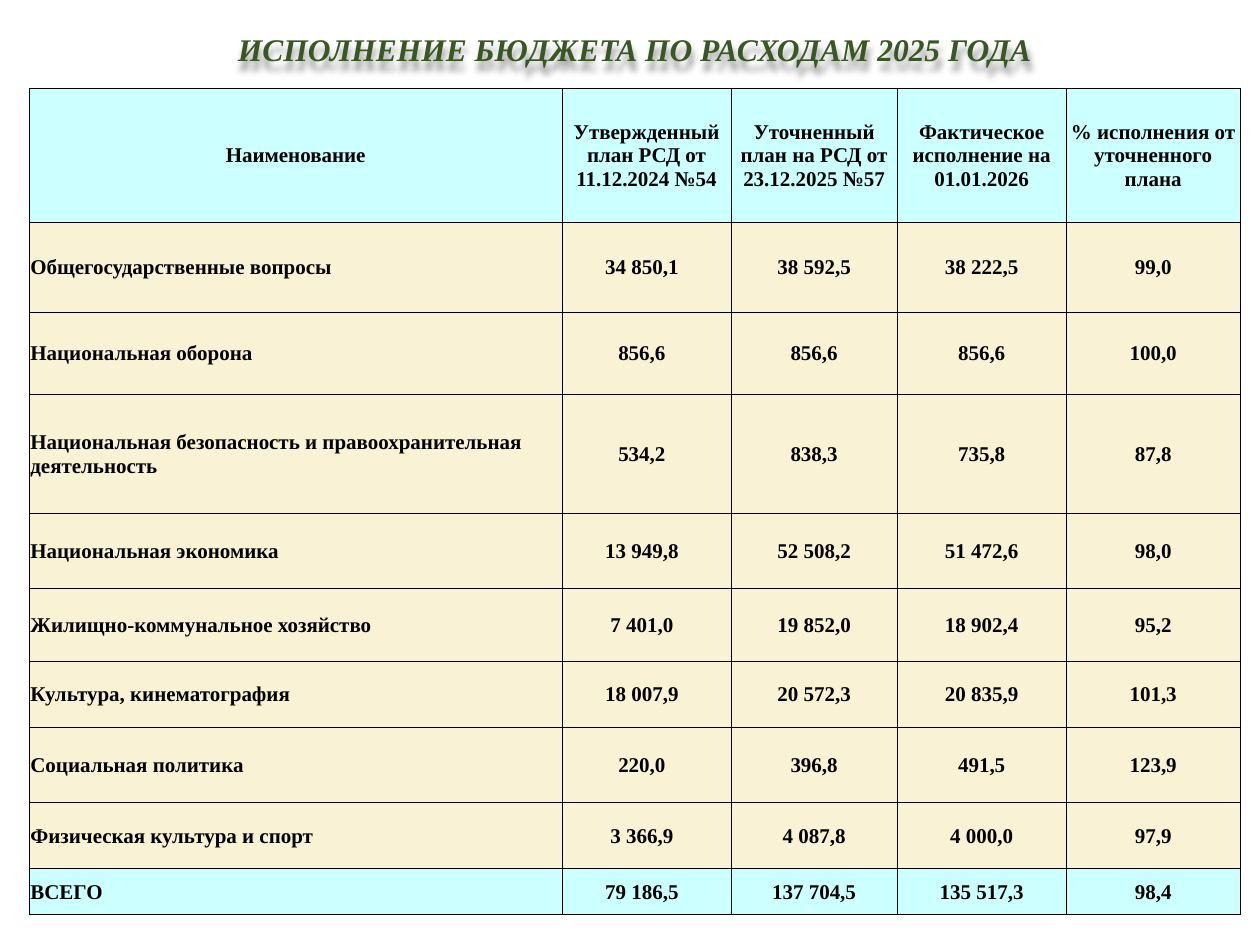
from lxml import etree
from pptx import Presentation
from pptx.dml.color import RGBColor
from pptx.enum import text
from pptx.oxml import parse_xml
from pptx.util import Pt

BLACK = RGBColor(0x00, 0x00, 0x00)
GREEN = RGBColor(0x38, 0x57, 0x23)
CYAN = RGBColor(0xCC, 0xFF, 0xFF)
CREAM = RGBColor(0xFA, 0xF2, 0xD4)
FONT = "Times New Roman"
DRAWING_NS = "http://schemas.openxmlformats.org/drawingml/2006/main"

ROWS = [
    ("Наименование", "Утвержденный план РСД от 11.12.2024 №54",
     "Уточненный план на РСД от 23.12.2025 №57",
     "Фактическое исполнение на 01.01.2026", "% исполнения от уточненного плана"),
    ("Общегосударственные вопросы", "34 850,1", "38 592,5", "38 222,5", "99,0"),
    ("Национальная оборона", "856,6", "856,6", "856,6", "100,0"),
    ("Национальная безопасность и правоохранительная деятельность",
     "534,2", "838,3", "735,8", "87,8"),
    ("Национальная экономика", "13 949,8", "52 508,2", "51 472,6", "98,0"),
    ("Жилищно-коммунальное хозяйство", "7 401,0", "19 852,0", "18 902,4", "95,2"),
    ("Культура, кинематография", "18 007,9", "20 572,3", "20 835,9", "101,3"),
    ("Социальная политика", "220,0", "396,8", "491,5", "123,9"),
    ("Физическая культура и спорт", "3 366,9", "4 087,8", "4 000,0", "97,9"),
    ("ВСЕГО", "79 186,5", "137 704,5", "135 517,3", "98,4"),
]
COLUMN_WIDTHS = [304.5, 96.5, 95, 96.5, 99.5]
ROW_HEIGHTS = [76.5, 51.5, 47, 68, 43, 41.5, 38, 43, 37.5, 26.5]
LEFT = 16.75


def format_text(paragraph, size, color, alignment, italic=False):
    paragraph.alignment = alignment
    for run in paragraph.runs:
        run.font.name = FONT
        run.font.size = Pt(size)
        run.font.bold = True
        run.font.italic = italic
        run.font.color.rgb = color


def add_borders(cell):
    properties = cell._tc.get_or_add_tcPr()
    for index, side in enumerate(("lnL", "lnR", "lnT", "lnB")):
        properties.insert(index, parse_xml(
            f'<a:{side} xmlns:a="{DRAWING_NS}" w="{Pt(0.5)}"><a:solidFill>'
            f'<a:srgbClr val="{BLACK}"/></a:solidFill></a:{side}>'))


presentation = Presentation()
presentation.slide_width = Pt(720)
presentation.slide_height = Pt(540)
slide = presentation.slides.add_slide(presentation.slide_layouts[6])

# Title with a soft shadow below the letters
title = slide.shapes.add_textbox(Pt(LEFT), Pt(11.5), Pt(sum(COLUMN_WIDTHS)), Pt(34))
frame = title.text_frame
frame.word_wrap = True
frame.margin_top = Pt(5.5)
frame.text = "ИСПОЛНЕНИЕ БЮДЖЕТА ПО РАСХОДАМ 2025 ГОДА"
format_text(frame.paragraphs[0], 18, GREEN, text.PP_ALIGN.CENTER, italic=True)
effects = etree.SubElement(title._element.spPr, f"{{{DRAWING_NS}}}effectLst")
effects.append(parse_xml(
    f'<a:outerShdw xmlns:a="{DRAWING_NS}" blurRad="{Pt(4)}" dist="{Pt(4)}" dir="5400000">'
    '<a:srgbClr val="000000"><a:alpha val="40000"/></a:srgbClr></a:outerShdw>'))

# Budget table
table = slide.shapes.add_table(
    len(ROWS), len(COLUMN_WIDTHS), Pt(LEFT), Pt(50.4),
    Pt(sum(COLUMN_WIDTHS)), Pt(sum(ROW_HEIGHTS))).table
for column, width in zip(table.columns, COLUMN_WIDTHS):
    column.width = Pt(width)
for row, height in zip(table.rows, ROW_HEIGHTS):
    row.height = Pt(height)

# Cells: cyan header and total, cream rows between
for row_index, values in enumerate(ROWS):
    is_header = row_index == 0
    is_total = row_index == len(ROWS) - 1
    for column_index, value in enumerate(values):
        cell = table.cell(row_index, column_index)
        cell.text = value
        cell.vertical_anchor = text.MSO_ANCHOR.MIDDLE
        cell.margin_left = cell.margin_top = Pt(0.6)
        cell.margin_bottom = Pt(0)
        # Figures of the approved plan stand a little left of centre
        cell.margin_right = Pt(6 if column_index == 1 and not is_header else 0.6)
        cell.fill.solid()
        cell.fill.fore_color.rgb = CYAN if is_header or is_total else CREAM
        is_name = column_index == 0 and not is_header
        alignment = text.PP_ALIGN.LEFT if is_name else text.PP_ALIGN.CENTER
        format_text(cell.text_frame.paragraphs[0], 12, BLACK, alignment)
        add_borders(cell)

presentation.save("out.pptx")
